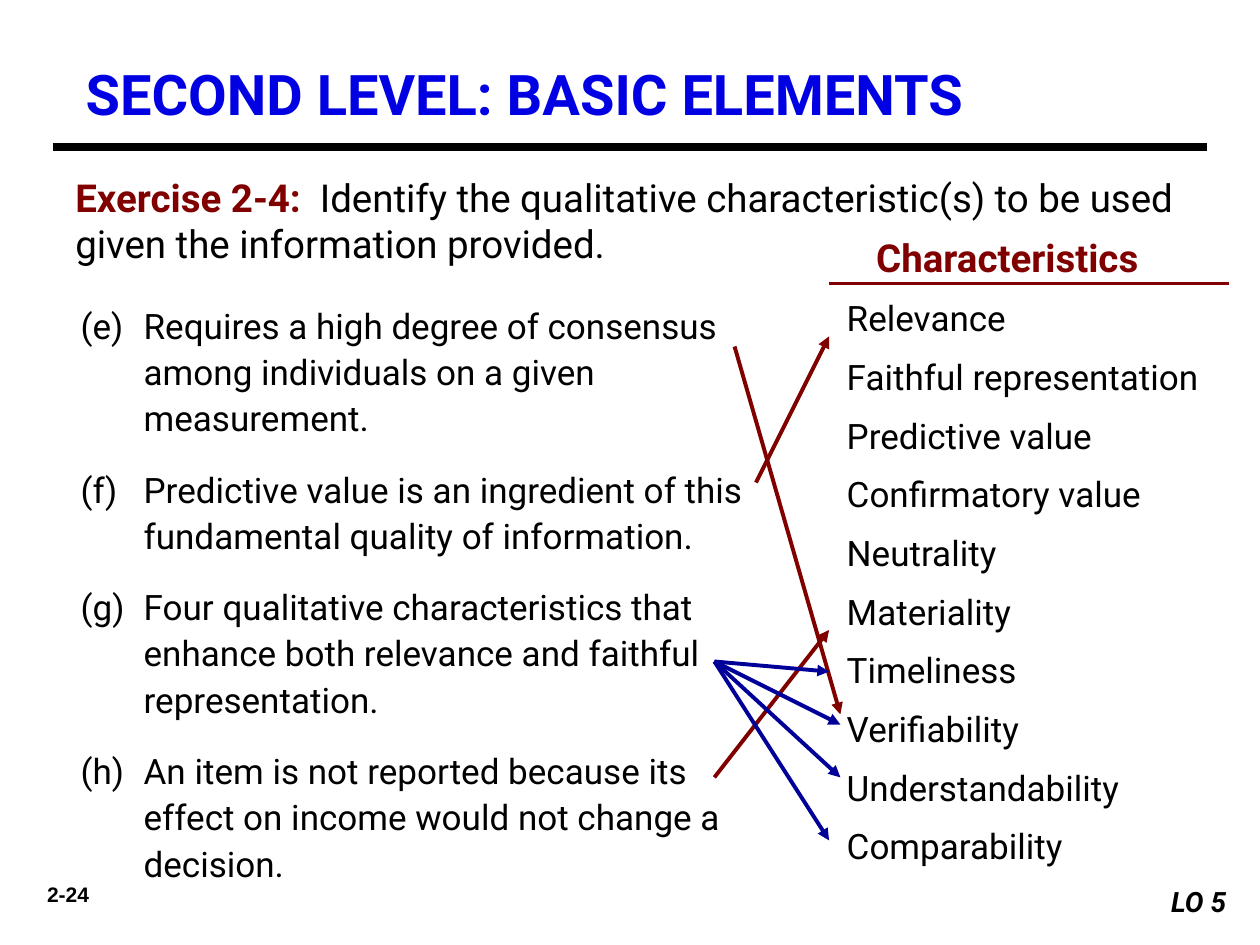
import pptx
import pptx.dml.color
import pptx.enum.shapes
import pptx.enum.text
import pptx.oxml.ns
import pptx.util
from lxml import etree
from pptx.util import Inches

RGBColor = pptx.dml.color.RGBColor
ALIGN = pptx.enum.text.PP_ALIGN
ANCHOR = pptx.enum.text.MSO_ANCHOR

BLACK = RGBColor(0x00, 0x00, 0x00)
WHITE = RGBColor(0xFF, 0xFF, 0xFF)
MAROON = RGBColor(0x80, 0x00, 0x00)
NAVY = RGBColor(0x00, 0x00, 0x99)
BLUE = RGBColor(0x00, 0x00, 0xE2)

STATEMENTS = [
    "Requires a high degree of consensus among individuals on a given measurement.",
    "Predictive value is an ingredient of this fundamental quality of information.",
    "Four qualitative characteristics that enhance both relevance and faithful representation.",
    "An item is not reported because its effect on income would not change a decision.",
]
CHARACTERISTICS = [
    "Relevance", "Faithful representation", "Predictive value",
    "Confirmatory value", "Neutrality", "Materiality", "Timeliness",
    "Verifiability", "Understandability", "Comparability",
]
ENHANCING_START = (5.67, 5.25)
ANSWERS = [
    ((5.83, 2.75), (6.67, 5.67), MAROON),
    ((6, 3.83), (6.58, 2.67), MAROON),
    ((5.67, 6.17), (6.58, 5), MAROON),
] + [(ENHANCING_START, end, NAVY)
     for end in [(6.58, 5.33), (6.67, 5.75), (6.67, 6.17), (6.58, 6.67)]]


def set_values(target, values):
    for name, value in values.items():
        setattr(target, name, value)


def place(shape, box):
    names = ("left", "top", "width", "height")
    set_values(shape, dict(zip(names, map(Inches, box))))


def prepare_frame(shape, anchor=ANCHOR.TOP, wrap=True):
    frame = shape.text_frame
    set_values(frame, {
        "auto_size": pptx.enum.text.MSO_AUTO_SIZE.NONE,
        "word_wrap": wrap, "vertical_anchor": anchor,
        "margin_left": Inches(0.1), "margin_right": Inches(0.1),
        "margin_top": Inches(0.05), "margin_bottom": Inches(0.05),
    })
    return frame


def add_run(paragraph, text, size, color=BLACK, bold=False, italic=False, name="Roboto"):
    run = paragraph.add_run()
    run.text = text
    set_values(run.font, {"name": name, "size": pptx.util.Pt(size),
                          "bold": bold, "italic": italic})
    run.font.color.rgb = color


def add_label(slide, box, runs, align=ALIGN.LEFT, **frame_options):
    """Add a text box whose single paragraph holds the given runs."""
    shape = slide.shapes.add_textbox(*map(Inches, box))
    paragraph = prepare_frame(shape, **frame_options).paragraphs[0]
    paragraph.alignment = align
    for run in runs:
        add_run(paragraph, **run)
    return shape


def add_line(slide, start, end, color, width=2.25, arrow=False):
    line = slide.shapes.add_connector(
        pptx.enum.shapes.MSO_CONNECTOR.STRAIGHT, *map(Inches, start + end))
    line.line.color.rgb = color
    line.line.width = pptx.util.Pt(width)
    if arrow:
        etree.SubElement(line.line._get_or_add_ln(),
                         pptx.oxml.ns.qn("a:tailEnd"), type="triangle")
    etree.SubElement(line._element.spPr, pptx.oxml.ns.qn("a:effectLst"))


def fill_list(placeholder, box, items, spacing, bullet, **bullet_values):
    place(placeholder, box)
    frame = prepare_frame(placeholder)
    for index, item in enumerate(items):
        paragraph = frame.paragraphs[0] if index == 0 else frame.add_paragraph()
        set_values(paragraph, spacing)
        properties = paragraph._p.get_or_add_pPr()
        properties.set("marL", str(Inches(0.62)))
        properties.set("indent", str(Inches(-0.5)))
        etree.SubElement(properties, pptx.oxml.ns.qn(bullet), **bullet_values)
        add_run(paragraph, item, 20)


def build_heading(slide, box):
    left, top, width, height = box
    title = slide.shapes.title
    place(title, (left + 0.16, top, width - 0.16, height))
    paragraph = prepare_frame(title).paragraphs[0]
    paragraph.alignment = ALIGN.LEFT
    add_run(paragraph, "SECOND LEVEL: BASIC ELEMENTS", 32, BLUE, bold=True)
    rule_y = top + 0.75
    add_line(slide, (left, rule_y), (left + width, rule_y), BLACK, width=4.5)


def build_instruction(slide, box):
    add_label(slide, box, [
        {"text": "Exercise 2-4:", "size": 22, "color": MAROON, "bold": True},
        {"text": "  Identify the qualitative characteristic(s) to be used "
                 "given the information provided.", "size": 22},
    ])


def build_statements(slide, box):
    spacing = {"line_spacing": 1.1, "space_before": pptx.util.Pt(10),
               "space_after": pptx.util.Pt(4.5)}
    fill_list(slide.placeholders[1], box, STATEMENTS, spacing,
              "a:buAutoNum", type="alphaLcParenBoth", startAt="5")
    slide.placeholders[1].text_frame.margin_right = Inches(0.05)


def build_characteristics(slide, box):
    left, top, width, height = box
    rule_y = top + 0.42
    add_label(slide, (left + 0.08, top, 2.83, 0.42),
              [{"text": "Characteristics", "size": 22, "color": MAROON, "bold": True}],
              align=ALIGN.CENTER, anchor=ANCHOR.MIDDLE, wrap=False)
    add_line(slide, (left + 0.08, rule_y), (left + width, rule_y), MAROON)
    spacing = {"line_spacing": 1.2, "space_before": pptx.util.Pt(0),
               "space_after": pptx.util.Pt(4.7)}
    fill_list(slide.placeholders[2], (left, top + 0.41, width, height - 0.41),
              CHARACTERISTICS, spacing, "a:buNone")


def build_answers(slide):
    for start, end, color in ANSWERS:
        add_line(slide, start, end, color, arrow=True)


def build_footer(slide, number_box, objective_box):
    add_label(slide, number_box,
              [{"text": "2-24", "size": 12, "bold": True, "name": "Arial"}],
              align=ALIGN.CENTER)
    objective = add_label(
        slide, objective_box,
        [{"text": "LO 5", "size": 16, "bold": True, "italic": True}],
        align=ALIGN.RIGHT)
    objective.fill.solid()
    objective.fill.fore_color.rgb = WHITE


def main():
    presentation = pptx.Presentation()
    presentation.slide_width = Inches(10)
    presentation.slide_height = Inches(7.5)
    # The "Two Content" layout offers a title and two lists
    slide = presentation.slides.add_slide(presentation.slide_layouts[3])
    build_heading(slide, (0.42, 0.42, 9.16, 0.61))
    build_instruction(slide, (0.5, 1.33, 9.33, 0.83))
    build_statements(slide, (0.42, 2.33, 5.58, 4.88))
    build_characteristics(slide, (6.5, 1.83, 3.25, 5.16))
    build_answers(slide)
    build_footer(slide, (0.08, 6.95, 0.92, 0.3), (8.58, 6.97, 1.25, 0.37))
    presentation.save("out.pptx")


if __name__ == "__main__":
    main()
